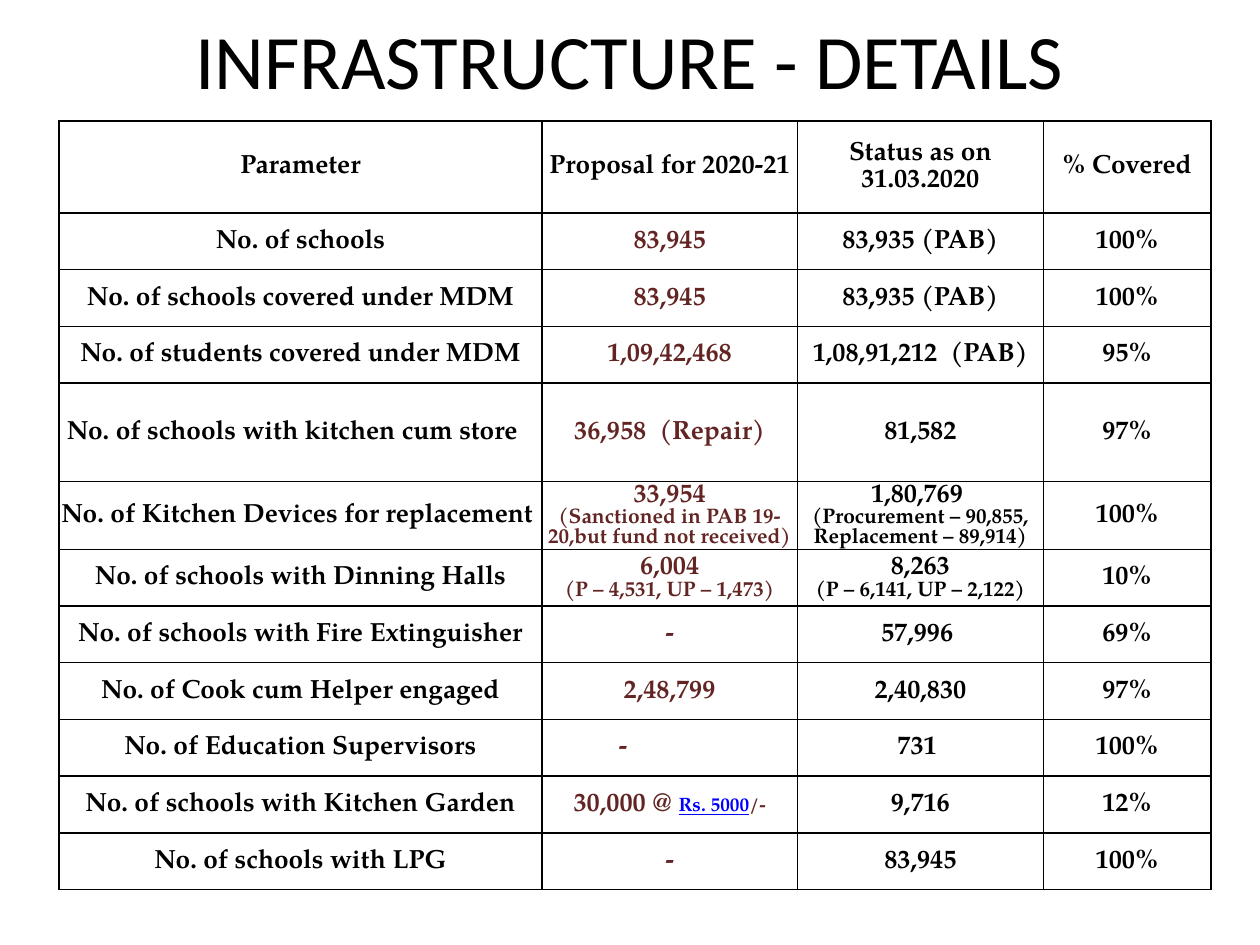
from lxml.etree import SubElement
from pptx import Presentation
from pptx.dml.color import RGBColor
from pptx.enum.text import MSO_ANCHOR, PP_ALIGN
from pptx.oxml.ns import qn
from pptx.util import Inches, Pt

COLORS = {"ink": "000000", "plan": "632523", "link": "0000FF"}
FACE = "TeX Gyre Pagella"
COLS = [3.83, 2.03, 1.95, 1.33]
ROWS = [0.73] + [0.45] * 3 + [0.78, 0.54] + [0.45] * 6
CELL = {
    "margin_left": Inches(0.01),
    "margin_right": Inches(0.01),
    "margin_top": Inches(0.01),
    "margin_bottom": 0,
    "vertical_anchor": MSO_ANCHOR.MIDDLE,
}
DATA = [
    ["Parameter", "Proposal for 2020-21", "Status as on 31.03.2020", "% Covered"],
    ["No. of schools", "83,945", "83,935\N{NO-BREAK SPACE}(PAB)", "100%"],
    ["No. of schools covered under MDM", "83,945", "83,935\N{NO-BREAK SPACE}(PAB)", "100%"],
    ["No. of students covered under MDM", "1,09,42,468", "1,08,91,212\N{NO-BREAK SPACE} (PAB)", "95%"],
    ["No. of schools with kitchen cum store", "36,958  (Repair)", "81,582", "97%"],
    ["No. of Kitchen Devices for replacement ",
     "33,954\n(Sanctioned in PAB 19-20,but fund not received)",
     "1,80,769 \n(Procurement – 90,855, Replacement – 89,914)", "100%"],
    ["No. of schools with Dinning Halls", "6,004\n(P – 4,531, UP – 1,473)",
     "8,263\n(P – 6,141, UP – 2,122)", "10%"],
    ["No. of schools with Fire Extinguisher", "-", "57,996\N{NO-BREAK SPACE}", "69%"],
    ["No. of Cook cum Helper engaged", "2,48,799", "2,40,830", "97%"],
    ["No. of Education Supervisors", "-", "731\N{NO-BREAK SPACE}", "100%"],
    ["No. of schools with Kitchen Garden", "30,000 @ ", "9,716", "12%"],
    ["No. of schools with LPG", "-", "83,945", "100%"],
]


def apply(item, form):
    for key, val in form.items():
        setattr(item, key, val)


def add_run(para, text, size, color, face=FACE, **form):
    run = para.add_run()
    run.text = text
    apply(run.font, {"name": face, "size": Pt(size), **form})
    run.font.color.rgb = RGBColor.from_string(COLORS[color])


def add_edges(cell):
    props = cell._tc.get_or_add_tcPr()
    for spot, side in enumerate(("lnL", "lnR", "lnT", "lnB")):
        line = props.makeelement(qn("a:" + side), {"w": str(Pt(1))})
        fill = SubElement(line, qn("a:solidFill"))
        SubElement(fill, qn("a:srgbClr"), val=COLORS["ink"])
        props.insert(spot, line)


def fill_cell(cell, text, color):
    apply(cell, CELL)
    cell.fill.background()
    add_edges(cell)
    frame = cell.text_frame
    for num, line in enumerate(text.split("\n")):
        para = frame.add_paragraph() if num else frame.paragraphs[0]
        size, lead = (12, 11.5) if num else (15, 15)
        apply(para, {"alignment": PP_ALIGN.CENTER, "line_spacing": Pt(lead)})
        add_run(para, line, size, color, bold=True)


def add_title(slide, box):
    title = slide.shapes.title
    apply(title, dict(zip(("left", "top", "width", "height"), box)))
    frame = title.text_frame
    frame.vertical_anchor = MSO_ANCHOR.MIDDLE
    para = frame.paragraphs[0]
    para.alignment = PP_ALIGN.CENTER
    add_run(para, "INFRASTRUCTURE - DETAILS", 44, "ink", "Calibri")


def add_grid(slide, box):
    grid = slide.shapes.add_table(len(ROWS), len(COLS), *box).table
    apply(grid, {"first_row": False, "horz_banding": False})
    for col, width in zip(grid.columns, COLS):
        col.width = Inches(width)
    for row, high in zip(grid.rows, ROWS):
        row.height = Inches(high)
    for r, words in enumerate(DATA):
        for c, text in enumerate(words):
            color = "plan" if r and c == 1 else "ink"
            fill_cell(grid.cell(r, c), text, color)

    store = grid.cell(4, 0)
    store.margin_left = Inches(0.06)
    store.text_frame.paragraphs[0].alignment = PP_ALIGN.LEFT
    grid.cell(9, 1).margin_right = Inches(0.75)
    para = grid.cell(10, 1).text_frame.paragraphs[0]
    add_run(para, "Rs. 5000", 11, "link", bold=True, underline=True)
    add_run(para, "/-", 11, "plan", bold=True)


def main():
    deck = Presentation()
    apply(deck, {"slide_width": Inches(10), "slide_height": Inches(7.5)})
    slide = deck.slides.add_slide(deck.slide_layouts[5])
    add_title(slide, [Inches(n) for n in (0, 0.03, 10, 0.88)])
    add_grid(slide, [Inches(n) for n in (0.47, 0.96, sum(COLS), sum(ROWS))])
    deck.save("out.pptx")


if __name__ == "__main__":
    main()
